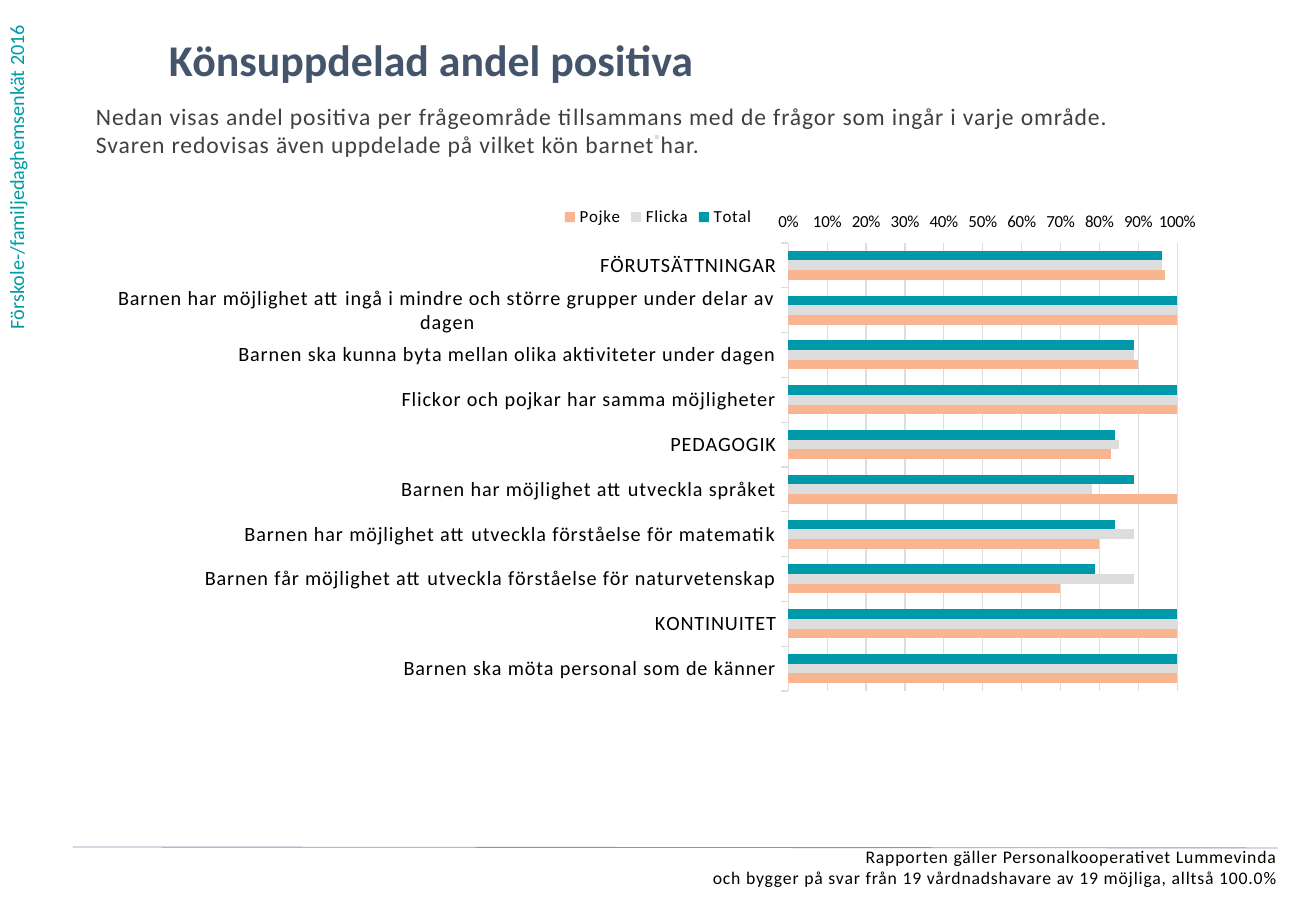
from lxml import etree
from pptx import Presentation
from pptx.chart.data import CategoryChartData
from pptx.dml.color import RGBColor
from pptx.enum.chart import (XL_AXIS_CROSSES as CROSSES, XL_CHART_TYPE as CHART,
                             XL_LEGEND_POSITION as LEGEND, XL_TICK_MARK as TICK)
from pptx.enum.shapes import MSO_CONNECTOR as CONNECTOR
from pptx.enum.text import PP_ALIGN as ALIGN
from pptx.oxml import parse_xml
from pptx.oxml.ns import nsdecls, qn
from pptx.util import Pt

PX = 7526
FONT = "Calibri"
COLORS = {"side": "009BA4", "title": "44546A", "body": "404040", "black": "000000",
          "dot": "D2D9E2", "rule": "8497B0", "grid": "DDDDDD",
          "Total": "0099AA", "Flicka": "DDDDDD", "Pojke": "F9B590"}
CATEGORIES = [
    "FÖRUTSÄTTNINGAR",
    "Barnen har möjlighet att ingå i mindre och större grupper under delar av dagen",
    "Barnen ska kunna byta mellan olika aktiviteter under dagen",
    "Flickor och pojkar har samma möjligheter",
    "PEDAGOGIK",
    "Barnen har möjlighet att utveckla språket",
    "Barnen har möjlighet att utveckla förståelse för matematik",
    "Barnen får möjlighet att utveckla förståelse för naturvetenskap",
    "KONTINUITET",
    "Barnen ska möta personal som de känner",
]
SERIES = {
    "Total": [0.96, 1, 0.89, 1, 0.84, 0.89, 0.84, 0.79, 1, 1],
    "Flicka": [0.96, 1, 0.89, 1, 0.85, 0.78, 0.89, 0.89, 1, 1],
    "Pojke": [0.97, 1, 0.9, 1, 0.83, 1, 0.8, 0.7, 1, 1],
}


def rgb(name):
    return RGBColor.from_string(COLORS[name])


def emu(*lengths):
    return [n * PX for n in lengths]


def set_font(font, size, color, spacing=0, bold=False):
    """Format a font; spacing is in hundredths of a point."""
    font.name, font.size, font.bold = FONT, Pt(size), bold
    font.color.rgb = rgb(color)
    if spacing:
        font._element.set("spc", str(spacing))


def add_text(slide, box, text, size, color, spacing=0, bold=False,
             align=ALIGN.LEFT, vertical=False):
    tf = slide.shapes.add_textbox(*emu(*box)).text_frame
    tf.word_wrap = True
    if vertical:
        tf._txBody.bodyPr.set("vert", "vert270")
    else:
        tf.margin_left = tf.margin_right = tf.margin_top = tf.margin_bottom = 0
    p = tf.paragraphs[0]
    p.text = text
    p.alignment = align
    for r in p.runs:
        set_font(r.font, size, color, spacing, bold)


def set_plot_layout(chart, box, plot):
    """Fix the inner plot area, given in px inside the chart's box."""
    left, top, width, height = plot
    fractions = {"x": left / box[2], "y": top / box[3],
                 "w": width / box[2], "h": height / box[3]}
    modes = '<c:xMode val="edge"/><c:yMode val="edge"/>'
    values = "".join(f'<c:{k} val="{v:.3f}"/>' for k, v in fractions.items())
    layout = parse_xml(f'<c:layout {nsdecls("c")}><c:manualLayout>'
                       f'<c:layoutTarget val="inner"/>{modes}{values}'
                       '</c:manualLayout></c:layout>')
    plot_area = chart._chartSpace.chart.plotArea
    for old in plot_area.findall(qn("c:layout")):
        plot_area.remove(old)
    plot_area.insert(0, layout)


def set_line(line, color, width):
    line.color.rgb = rgb(color)
    line.width = Pt(width)


def add_gender_chart(slide, box):
    data = CategoryChartData(number_format="0%")
    data.categories = CATEGORIES
    for name, values in SERIES.items():
        data.add_series(name, values)
    chart = slide.shapes.add_chart(CHART.BAR_CLUSTERED, *emu(*box), data).chart
    set_font(chart.font, 10, "black")
    chart.has_title = False
    set_plot_layout(chart, box, (692, 49, 389, 448))

    chart.has_legend = True
    legend = chart.legend
    legend.position = LEGEND.TOP
    legend.include_in_layout = False
    set_font(legend.font, 10, "black", 50)

    plot = chart.plots[0]
    plot.gap_width = 162
    plot.overlap = 0
    plot.vary_by_categories = False
    for s in plot.series:
        s.format.fill.solid()
        s.format.fill.fore_color.rgb = rgb(s.name)

    questions = chart.category_axis
    questions.reverse_order = True
    questions.crosses = CROSSES.MINIMUM
    questions.major_tick_mark = TICK.OUTSIDE
    set_line(questions.format.line, "grid", 0.75)
    set_font(questions.tick_labels.font, 12, "black", 50)

    share = chart.value_axis
    share.minimum_scale, share.maximum_scale, share.major_unit = 0, 1, 0.1
    share.major_tick_mark = TICK.OUTSIDE
    share.format.line.fill.background()
    share.has_major_gridlines = True
    set_line(share.major_gridlines.format.line, "grid", 0.75)
    share.tick_labels.number_format = "0%"
    share.tick_labels.number_format_is_linked = False
    set_font(share.tick_labels.font, 10, "black")


def add_header(slide, box):
    left, top, width, height = box
    add_text(slide, (left + 73, top, 1013, 69), "Könsuppdelad andel positiva",
             26, "title", bold=True)
    add_text(slide, (left, top + 69, width, height - 69),
             "Nedan visas andel positiva per frågeområde tillsammans med de frågor "
             "som ingår i varje område.\vSvaren redovisas även uppdelade på vilket "
             "kön barnet har.", 14, "body", 50)
    add_text(slide, (left + 374, top + 91, 374, 47), "⋅", 12, "dot", 50, True,
             ALIGN.CENTER)


def add_footer(slide, box):
    left, top, width, height = box
    add_text(slide, box,
             "Rapporten gäller Personalkooperativet Lummevinda\voch bygger på svar "
             "från 19 vårdnadshavare av 19 möjliga, alltså 100.0%",
             10.5, "black", 50, align=ALIGN.RIGHT)
    rule = slide.shapes.add_connector(
        CONNECTOR.STRAIGHT, *emu(left + 58, top + 1, left + width, top + 2))
    set_line(rule.line, "rule", 0.5)
    etree.SubElement(rule._element.spPr, qn("a:effectLst"))


def main():
    prs = Presentation()
    prs.slide_width, prs.slide_height = emu(1316, 911)
    slide = prs.slides.add_slide(prs.slide_layouts[6])
    add_text(slide, (-2, 0, 49, 341), "Förskole-/familjedaghemsenkät 2016",
             12, "side", vertical=True)
    add_header(slide, (96, 33, 1149, 192))
    add_gender_chart(slide, (96, 194, 1124, 538))
    add_footer(slide, (15, 846, 1263, 52))
    prs.save("out.pptx")


if __name__ == "__main__":
    main()
